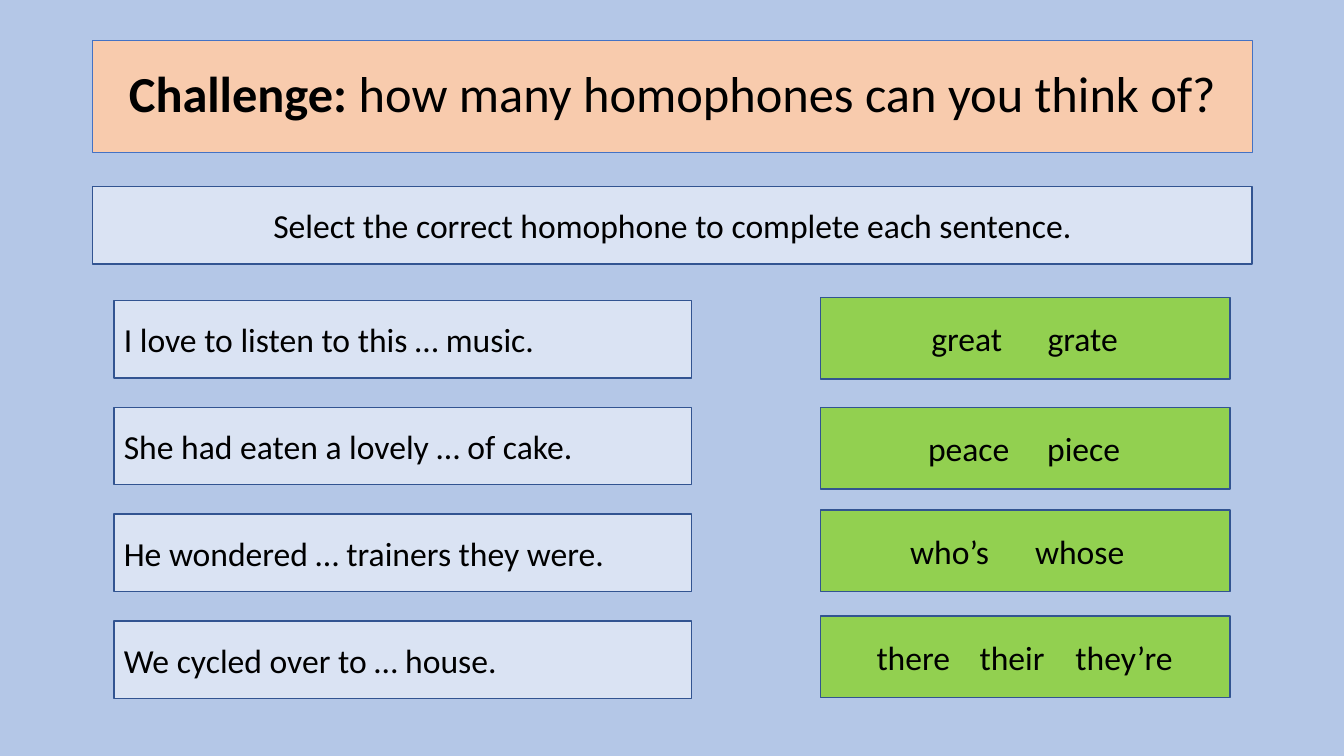
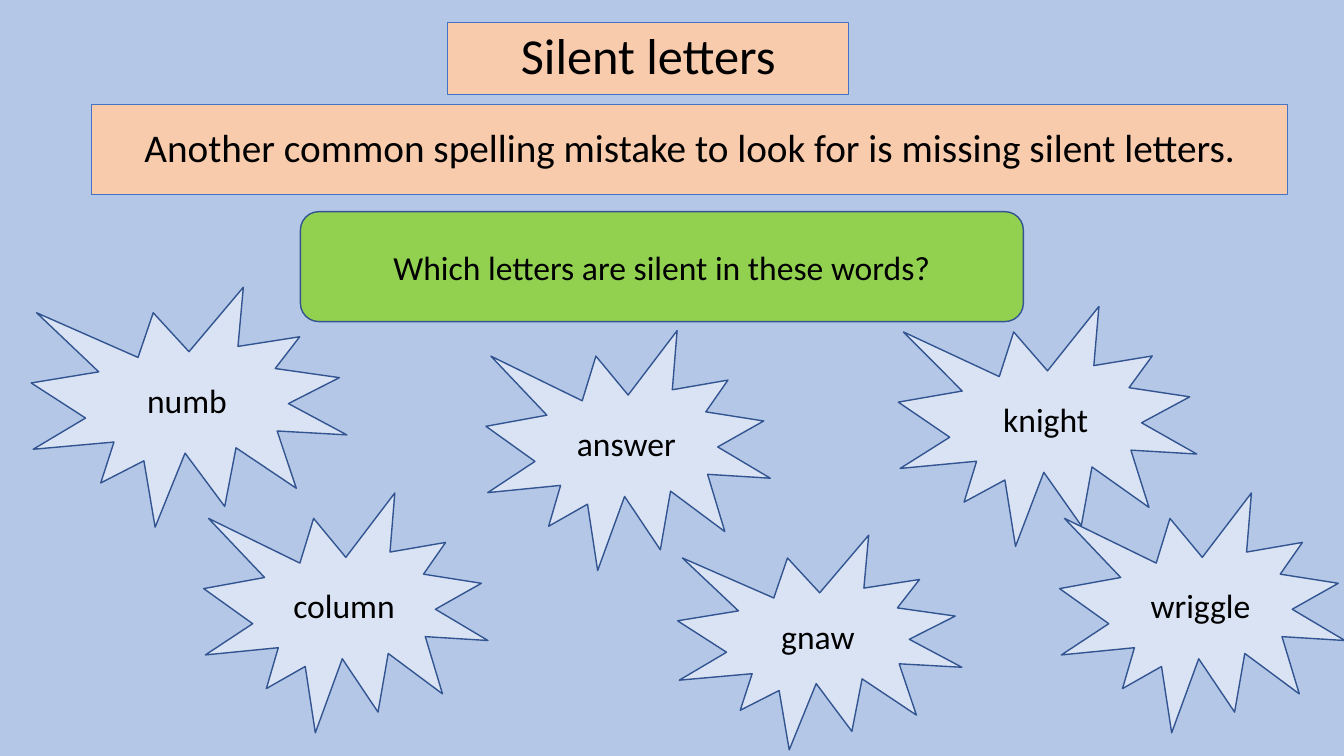
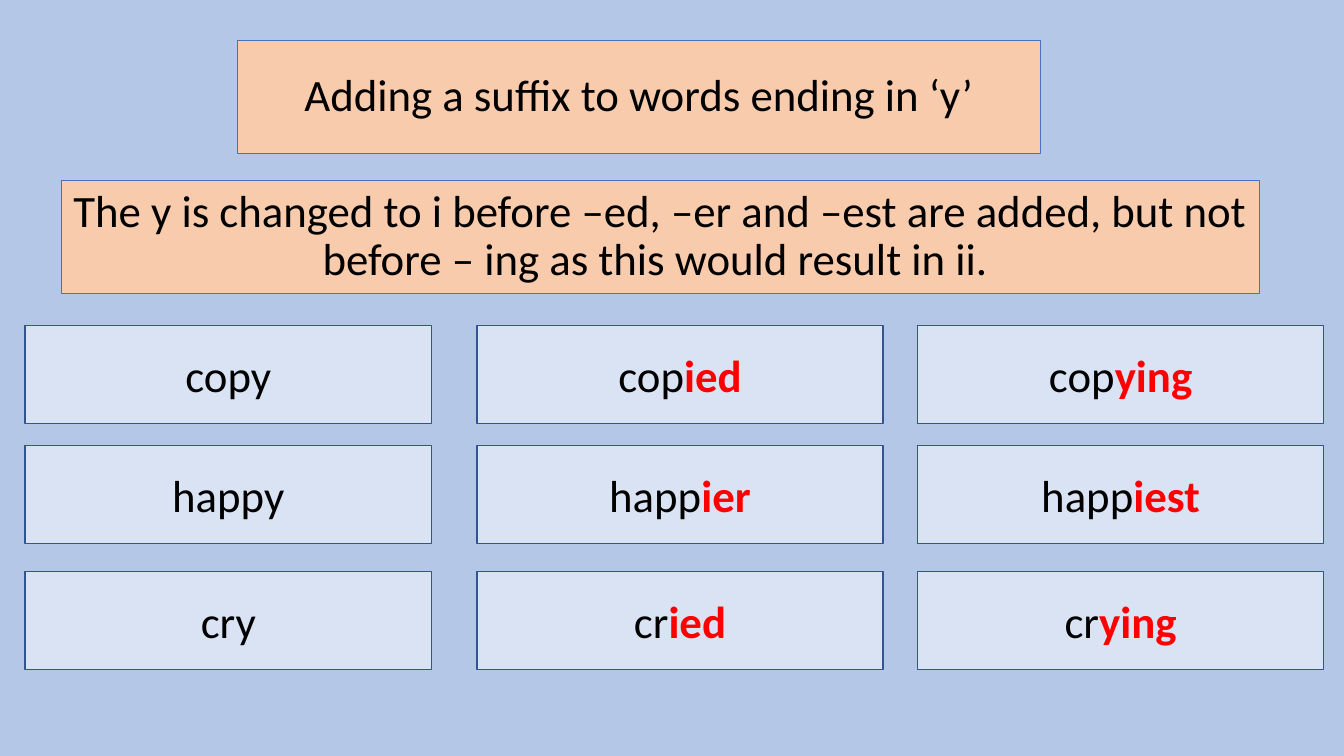
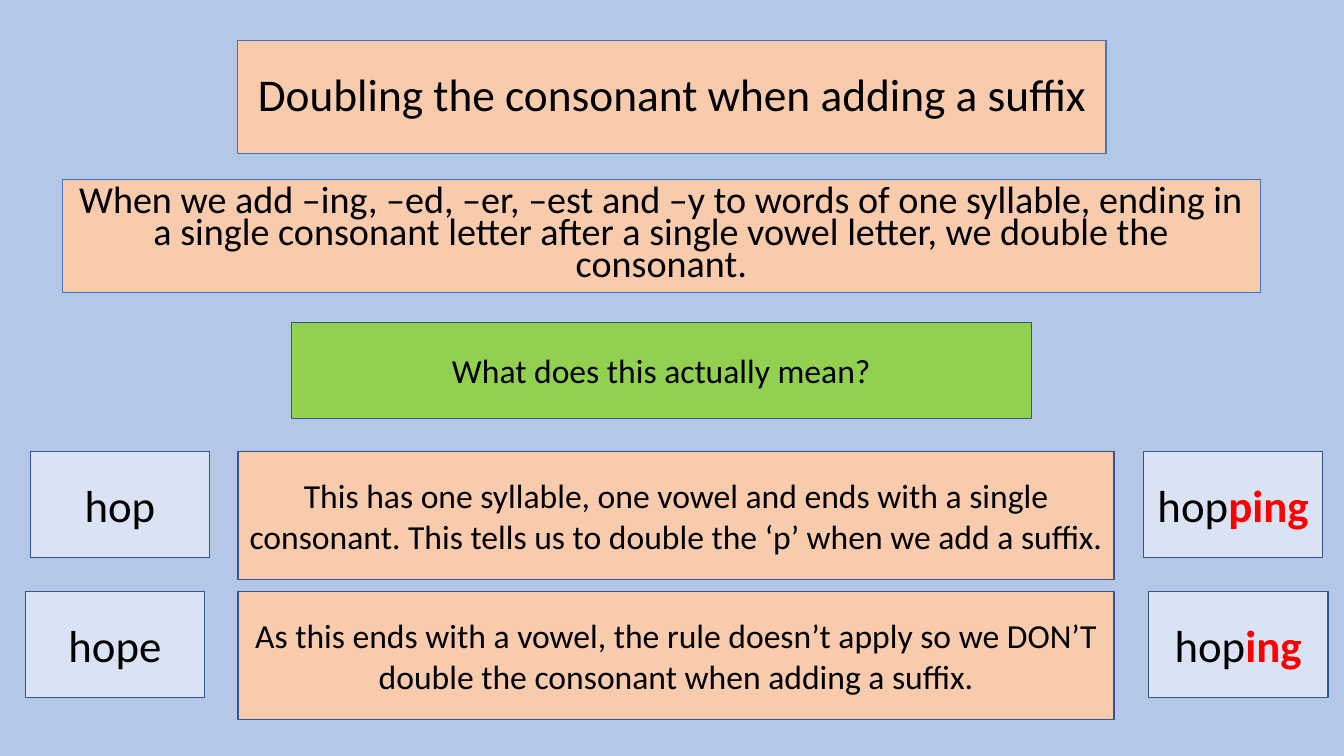
from dataclasses import dataclass

from lxml import etree
from pptx import Presentation
from pptx import util as u
from pptx.dml.color import RGBColor
from pptx.enum import shapes, text
from pptx.oxml.ns import qn


@dataclass(frozen=True)
class BoxStyle:
    fill: str
    line: str = "325491"
    line_width: float = 1
    spacing: float = 1


class Theme:
    background = "B4C7E7"
    ink = "000000"
    suffix = "FF0000"
    font = "Calibri"
    heading, large, medium, body = 36, 32, 28, 24
    banner = BoxStyle("F8CBAD", "4472C4", 0.75, 0.9)
    tight_banner = BoxStyle("F8CBAD", "4472C4", 0.75, 0.7)
    note = BoxStyle("F8CBAD")
    card = BoxStyle("DAE3F3")
    prompt = BoxStyle("92D050")


SLIDE_WIDTH, SLIDE_HEIGHT = 13.33, 7.5
RECT = shapes.MSO_SHAPE.RECTANGLE
ROUNDED = shapes.MSO_SHAPE.ROUNDED_RECTANGLE
BURST = shapes.MSO_SHAPE.EXPLOSION1
LEFT, CENTER = text.PP_ALIGN.LEFT, text.PP_ALIGN.CENTER

# Sentence, top of its choices, choices, centre of each choice
HOMOPHONES = [
    ("I love to listen to this … music.", 2.95, ["great", "grate"], [1.35, 2.5]),
    ("She had eaten a lovely … of cake.", 4.04, ["peace", "piece"], [1.37, 2.51]),
    ("He wondered … trainers they were.", 5.06, ["who’s", "whose"], [1.18, 2.47]),
    ("We cycled over to … house.", 6.11, ["there", "their", "they’re"],
     [0.82, 1.8, 2.91]),
]

SILENT_LETTER_WORDS = [
    ("answer", (4.82, 3.28, 2.82, 2.38)),
    ("knight", (8.91, 3.04, 2.96, 2.38)),
    ("numb", (0.31, 2.85, 3.13, 2.38)),
    ("wriggle", (10.51, 4.89, 2.83, 2.38)),
    ("column", (2.02, 4.89, 2.82, 2.38)),
    ("gnaw", (6.72, 5.31, 2.82, 2.13)),
]

# Each word is a stem and a highlighted suffix
Y_ENDINGS = [
    [("copy", ""), ("cop", "ied"), ("cop", "ying")],
    [("happy", ""), ("happ", "ier"), ("happ", "iest")],
    [("cry", ""), ("cr", "ied"), ("cr", "ying")],
]
Y_COLUMNS, Y_ROWS = (0.25, 4.73, 9.1), (3.23, 4.42, 5.67)

# Row top, inset from the slide edges, word, explanation, word with suffix
DOUBLING = [
    (4.48, 0.3, "hop", "This has one syllable, one vowel and ends with a single "
     "consonant. This tells us to double the ‘p’ when we add a suffix.",
     ("hop", "ping")),
    (5.87, 0.25, "hope", "As this ends with a vowel, the rule doesn’t apply so we "
     "DON’T double the consonant when adding a suffix.", ("hop", "ing")),
]


def add_run(paragraph, words, size, color=Theme.ink, bold=False):
    run = paragraph.add_run()
    run.text = words
    run.font.name, run.font.size, run.font.bold = Theme.font, u.Pt(size), bold
    run.font.color.rgb = RGBColor.from_string(color)


def add_box(slide, area, style, words="", size=Theme.body, align=CENTER, kind=RECT):
    """Draw a filled shape and return its paragraph for further runs."""
    box = slide.shapes.add_shape(kind, *map(u.Inches, area))
    box.shadow.inherit = False
    box.fill.solid()
    box.fill.fore_color.rgb = RGBColor.from_string(style.fill)
    box.line.color.rgb = RGBColor.from_string(style.line)
    box.line.width = u.Pt(style.line_width)
    frame = box.text_frame
    frame.word_wrap = True
    frame.vertical_anchor = text.MSO_ANCHOR.MIDDLE
    paragraph = frame.paragraphs[0]
    paragraph.alignment = align
    paragraph.line_spacing = style.spacing
    if words:
        add_run(paragraph, words, size)
    return paragraph


def add_word_card(slide, area, stem, suffix=""):
    paragraph = add_box(slide, area, Theme.card, stem, Theme.large)
    if suffix:
        add_run(paragraph, suffix, Theme.large, Theme.suffix, True)


def add_choices(slide, area, choices, centres):
    """Spread the choices over centred tab stops."""
    paragraph = add_box(slide, area, Theme.prompt, align=LEFT)
    stops = etree.SubElement(paragraph._p.get_or_add_pPr(), qn("a:tabLst"))
    for choice, centre in zip(choices, centres):
        etree.SubElement(stops, qn("a:tab"), pos=str(u.Inches(centre)), algn="ctr")
        add_run(paragraph, "\t" + choice, Theme.body)


def build_homophones(slide):
    left, width = 0.92, 11.5
    title = add_box(slide, (left, 0.4, width, 1.11), Theme.banner)
    add_run(title, "Challenge:", Theme.heading, bold=True)
    add_run(title, " how many homophones can you think of?", Theme.heading)
    add_box(slide, (left, 1.85, width, 0.77), Theme.card,
            "Select the correct homophone to complete each sentence.")
    for row, (sentence, top, choices, centres) in enumerate(HOMOPHONES):
        add_box(slide, (1.13, 2.98 + 1.06 * row, 5.73, 0.77), Theme.card,
                sentence, align=LEFT)
        add_choices(slide, (8.14, top, 4.06, 0.81), choices, centres)


def build_silent_letters(slide):
    add_box(slide, (4.44, 0.22, 3.98, 0.72), Theme.banner, "Silent letters",
            Theme.heading)
    add_box(slide, (0.91, 1.04, 11.86, 0.89), Theme.banner,
            "Another common spelling mistake to look for is missing silent letters.",
            Theme.medium)
    add_box(slide, (2.98, 2.1, 7.17, 1.09), Theme.prompt,
            "Which letters are silent in these words?", kind=ROUNDED)
    for word, area in SILENT_LETTER_WORDS:
        add_box(slide, area, Theme.card, word, kind=BURST)


def build_y_endings(slide):
    add_box(slide, (2.36, 0.4, 7.96, 1.12), Theme.banner,
            "Adding a suffix to words ending in ‘y’", Theme.large)
    add_box(slide, (0.61, 1.79, 11.88, 1.12), Theme.banner,
            "The y is changed to i before –ed, –er and –est are added, but not "
            "before – ing as this would result in ii. ", Theme.large)
    for top, words in zip(Y_ROWS, Y_ENDINGS):
        for left, (stem, suffix) in zip(Y_COLUMNS, words):
            add_word_card(slide, (left, top, 4.03, 0.97), stem, suffix)


def build_doubling(slide):
    add_box(slide, (2.36, 0.4, 8.61, 1.12), Theme.banner,
            "Doubling the consonant when adding a suffix", 32.4)
    add_box(slide, (0.62, 1.78, 11.88, 1.12), Theme.tight_banner,
            "When we add –ing, –ed, –er, –est and –y to words of one syllable, "
            "ending in a single consonant letter after a single vowel letter, we "
            "double the consonant.", 27.2)
    add_box(slide, (2.89, 3.2, 7.34, 0.95), Theme.prompt,
            "What does this actually mean?")
    width, height = 1.78, 1.05
    for top, inset, word, explanation, suffixed in DOUBLING:
        add_word_card(slide, (inset, top, width, height), word)
        add_box(slide, (2.36, top, 8.69, 1.27), Theme.note, explanation)
        right = SLIDE_WIDTH - width - inset + 0.09
        add_word_card(slide, (right, top, width, height), *suffixed)


def main():
    deck = Presentation()
    deck.slide_width, deck.slide_height = u.Inches(SLIDE_WIDTH), u.Inches(SLIDE_HEIGHT)
    backdrop = deck.slide_master.background.fill
    backdrop.solid()
    backdrop.fore_color.rgb = RGBColor.from_string(Theme.background)
    blank = deck.slide_layouts[6]
    for build in (build_homophones, build_silent_letters, build_y_endings,
                  build_doubling):
        build(deck.slides.add_slide(blank))
    deck.save("out.pptx")


if __name__ == "__main__":
    main()
